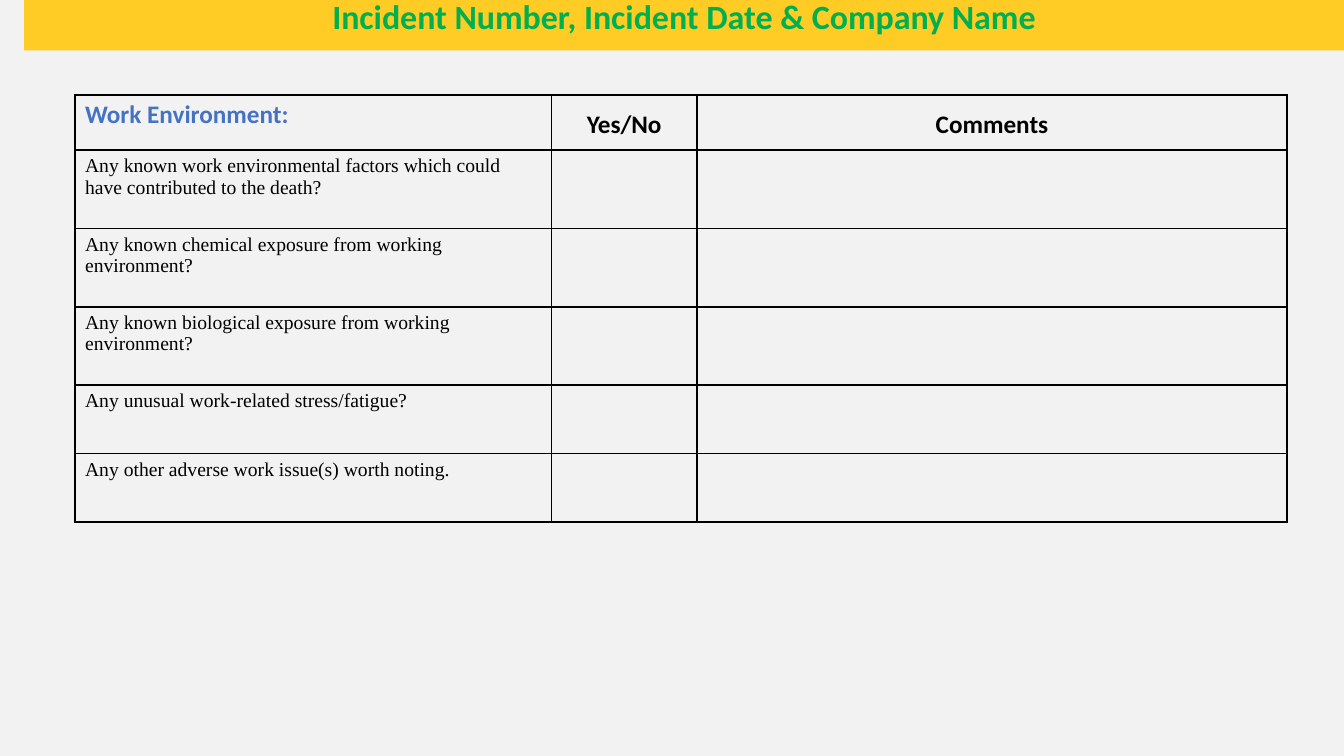
from lxml.etree import SubElement
from pptx import Presentation
from pptx.dml.color import RGBColor
from pptx.enum.text import MSO_ANCHOR as Anchor, MSO_AUTO_SIZE as AutoSize, PP_ALIGN as Align
from pptx.oxml.ns import qn
from pptx.util import Cm, Pt

HEADING = "Incident Number, Incident Date & Company Name"
HEADERS = ["Work Environment:", "Yes/No", "Comments"]
# Question and row height in cm
QUESTIONS = [
    ("Any known work environmental factors which could have contributed to the death?", 1.97),
    ("Any known chemical exposure from working environment?", 1.97),
    ("Any known biological exposure from working environment?", 1.97),
    ("Any unusual work-related stress/fatigue?", 1.73),
    ("Any other adverse work issue(s) worth noting.", 1.73),
]
COLUMN_WIDTHS = [12.01, 3.66, 14.88]
HEADER_HEIGHT = 1.4
COLORS = {"background": "F2F2F2", "banner": "FFCB25", "heading": "00B050",
          "topic": "4472C4", "ink": "000000"}


def color(name):
    return RGBColor.from_string(COLORS[name])


def style(paragraph, font_name, size, color_name, bold):
    for run in paragraph.runs:
        run.font.name = font_name
        run.font.size = Pt(size)
        run.font.bold = bold
        run.font.color.rgb = color(color_name)


def add_borders(cell):
    properties = cell._tc.get_or_add_tcPr()
    for position, side in enumerate(("a:lnL", "a:lnR", "a:lnT", "a:lnB")):
        border = properties.makeelement(qn(side), {"w": str(Pt(1.5))})
        fill = SubElement(border, qn("a:solidFill"))
        SubElement(fill, qn("a:srgbClr"), val=COLORS["ink"])
        properties.insert(position, border)


def main():
    deck = Presentation()
    deck.slide_width, deck.slide_height = Cm(33.87), Cm(19.05)
    slide = deck.slides.add_slide(deck.slide_layouts[5])
    slide.background.fill.solid()
    slide.background.fill.fore_color.rgb = color("background")

    # Banner title
    banner = slide.shapes.title
    banner.left, banner.top, banner.width, banner.height = Cm(0.61), Cm(0), Cm(33.26), Cm(1.27)
    banner.fill.solid()
    banner.fill.fore_color.rgb = color("banner")
    frame = banner.text_frame
    frame.text = HEADING
    frame.word_wrap = True
    frame.auto_size = AutoSize.NONE
    frame.vertical_anchor = Anchor.TOP
    frame.margin_top = frame.margin_bottom = 0
    heading = frame.paragraphs[0]
    heading.alignment = Align.CENTER
    heading.line_spacing = 0.9
    style(heading, "Calibri", 24.3, "heading", True)

    # Checklist table
    row_heights = [HEADER_HEIGHT] + [height for _, height in QUESTIONS]
    checklist = slide.shapes.add_table(
        len(row_heights), len(HEADERS), Cm(1.89), Cm(2.39),
        Cm(sum(COLUMN_WIDTHS)), Cm(sum(row_heights))).table
    checklist.horz_banding = False
    checklist.first_row = False
    for column, width in zip(checklist.columns, COLUMN_WIDTHS):
        column.width = Cm(width)
    for row, height in zip(checklist.rows, row_heights):
        row.height = Cm(height)
    for cell in checklist.iter_cells():
        cell.fill.background()
        add_borders(cell)

    # Header row
    for index, label in enumerate(HEADERS):
        cell = checklist.cell(0, index)
        cell.text = label
        paragraph = cell.text_frame.paragraphs[0]
        style(paragraph, "Calibri", 18, "ink" if index else "topic", True)
        if index:
            cell.vertical_anchor = Anchor.MIDDLE
            cell.margin_left = cell.margin_right = Cm(0.18)
            cell.margin_top = cell.margin_bottom = 0
            paragraph.alignment = Align.CENTER
            paragraph.line_spacing = 1.15

    # Questions
    for index, (question, _) in enumerate(QUESTIONS, start=1):
        cell = checklist.cell(index, 0)
        cell.text = question
        style(cell.text_frame.paragraphs[0], "Times New Roman", 14, "ink", False)

    deck.save("out.pptx")


if __name__ == "__main__":
    main()
